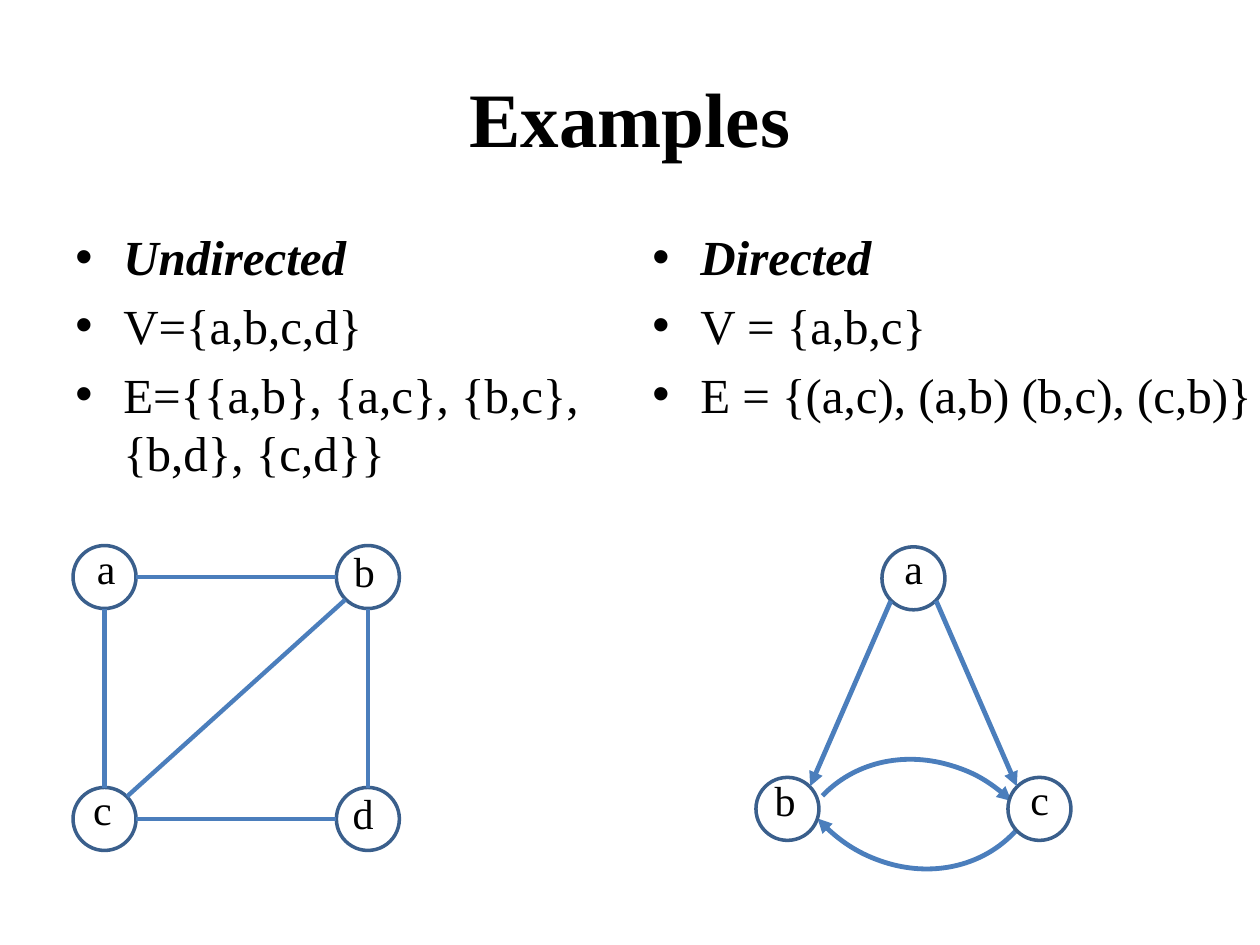
import math
import pptx
import pptx.util
import pptx.dml.color
import pptx.enum.shapes
import pptx.enum.text
import pptx.oxml
import pptx.oxml.ns

PX = 9144  # EMU per px, 100 px to the inch
FONT = "Times New Roman"
HUES = {"text": "000000", "node": "FFFFFF", "ring": "3A5F8C", "edge": "4B7EBC"}
RAD = 25  # node radius
KIND = pptx.enum.shapes.MSO_SHAPE

deck = pptx.Presentation()
deck.slide_width, deck.slide_height = 1000 * PX, 750 * PX
slide = deck.slides.add_slide(deck.slide_layouts[6])
shapes = slide.shapes


def write(box, lines, size, wrap=True):
    """Put lines of (text, bold, italic) in a new text box."""
    frame = shapes.add_textbox(*[n * PX for n in box]).text_frame
    frame.word_wrap = wrap
    for i, (text, bold, slant) in enumerate(lines):
        para = frame.add_paragraph() if i else frame.paragraphs[0]
        para.text = text
        font = para.font
        font.name, font.size = FONT, pptx.util.Pt(size)
        font.bold, font.italic = bold, slant
        font.color.rgb = pptx.dml.color.RGBColor.from_string(HUES["text"])
    return frame


def stroke(shape, hue, width, arrow=False):
    """Style an outline, with an arrowhead at its end if asked."""
    shape.line.color.rgb = pptx.dml.color.RGBColor.from_string(HUES[hue])
    shape.line.width = pptx.util.Pt(width)
    props = shape.element.spPr
    if arrow:
        tip = pptx.oxml.parse_xml(
            f'<a:tailEnd {pptx.oxml.ns.nsdecls("a")} type="triangle"/>')
        props.find(pptx.oxml.ns.qn("a:ln")).append(tip)
    props.append(pptx.oxml.parse_xml(
        f'<a:effectLst {pptx.oxml.ns.nsdecls("a")}/>'))


# Title
title = write((50, 30, 900, 125), [("Examples", True, False)], 44)
title.vertical_anchor = pptx.enum.text.MSO_ANCHOR.MIDDLE
title.paragraphs[0].alignment = pptx.enum.text.PP_ALIGN.CENTER

# Bulleted definitions
lists = [
    ((50, 175, 442, 225),
     ["Undirected", "V={a,b,c,d}", "E={{a,b}, {a,c}, {b,c}, {b,d}, {c,d}}"]),
    ((508, 175, 525, 208),
     ["Directed", "V = {a,b,c}", "E = {(a,c), (a,b) (b,c), (c,b)}"]),
]
for box, texts in lists:
    lines = [(text, i == 0, i == 0) for i, text in enumerate(texts)]
    for para in write(box, lines, 28).paragraphs:
        para.space_before = pptx.util.Pt(5.6)
        props = para._p.get_or_add_pPr()
        props.set("marL", str(38 * PX))
        props.set("indent", str(-38 * PX))
        for tag in ('buFont {} typeface="Arial"', 'buChar {} char="•"'):
            props.insert_element_before(pptx.oxml.parse_xml(
                f'<a:{tag.format(pptx.oxml.ns.nsdecls("a"))}/>'),
                "a:tabLst", "a:defRPr", "a:extLst")

# Curved arrows between b and c: left, top, turn, angles
for left, top, turn, sweep in [(633, 597, 313.6, None),
                               (624, 472, 135.3, (158.682, 2.148))]:
    arc = shapes.add_shape(KIND.ARC, left * PX, top * PX, 201 * PX, 223 * PX)
    arc.rotation = turn
    if sweep:
        arc.adjustments[0], arc.adjustments[1] = sweep
    arc.fill.background()
    stroke(arc, "edge", 2.75, True)

# Graphs: node centres with label corners, edges, line width, arrowheads
graphs = [
    ({"a": (83, 458, 67, 426), "b": (292, 458, 271, 428),
      "c": (83, 650, 64, 617), "d": (292, 650, 270, 620)},
     ["ab", "cb", "db", "ac", "cd"], 2.5, False),
    ({"a": (725, 459, 708, 426), "b": (625, 642, 605, 610),
      "c": (825, 642, 808, 609)},
     ["ab", "ac"], 2.75, True),
]
for nodes, edges, width, arrow in graphs:
    for x, y, *_ in nodes.values():
        node = shapes.add_shape(KIND.OVAL, (x - RAD) * PX, (y - RAD) * PX,
                                2 * RAD * PX, 2 * RAD * PX)
        node.fill.solid()
        node.fill.fore_color.rgb = pptx.dml.color.RGBColor.from_string(HUES["node"])
        stroke(node, "ring", 2)

    # Each edge leaves its node at a side or at a 45 degree point
    for one, two in edges:
        (x1, y1), (x2, y2) = nodes[one][:2], nodes[two][:2]
        dx, dy = (x2 > x1) - (x2 < x1), (y2 > y1) - (y2 < y1)
        step = RAD / math.hypot(dx, dy)
        dx, dy = round(dx * step), round(dy * step)
        edge = shapes.add_connector(
            pptx.enum.shapes.MSO_CONNECTOR.STRAIGHT, (x1 + dx) * PX,
            (y1 + dy) * PX, (x2 - dx) * PX, (y2 - dy) * PX)
        stroke(edge, "edge", width, arrow)

    for name, (_, _, left, top) in nodes.items():
        write((left, top, 36, 50), [(name, False, False)], 24, False)

deck.save("out.pptx")
